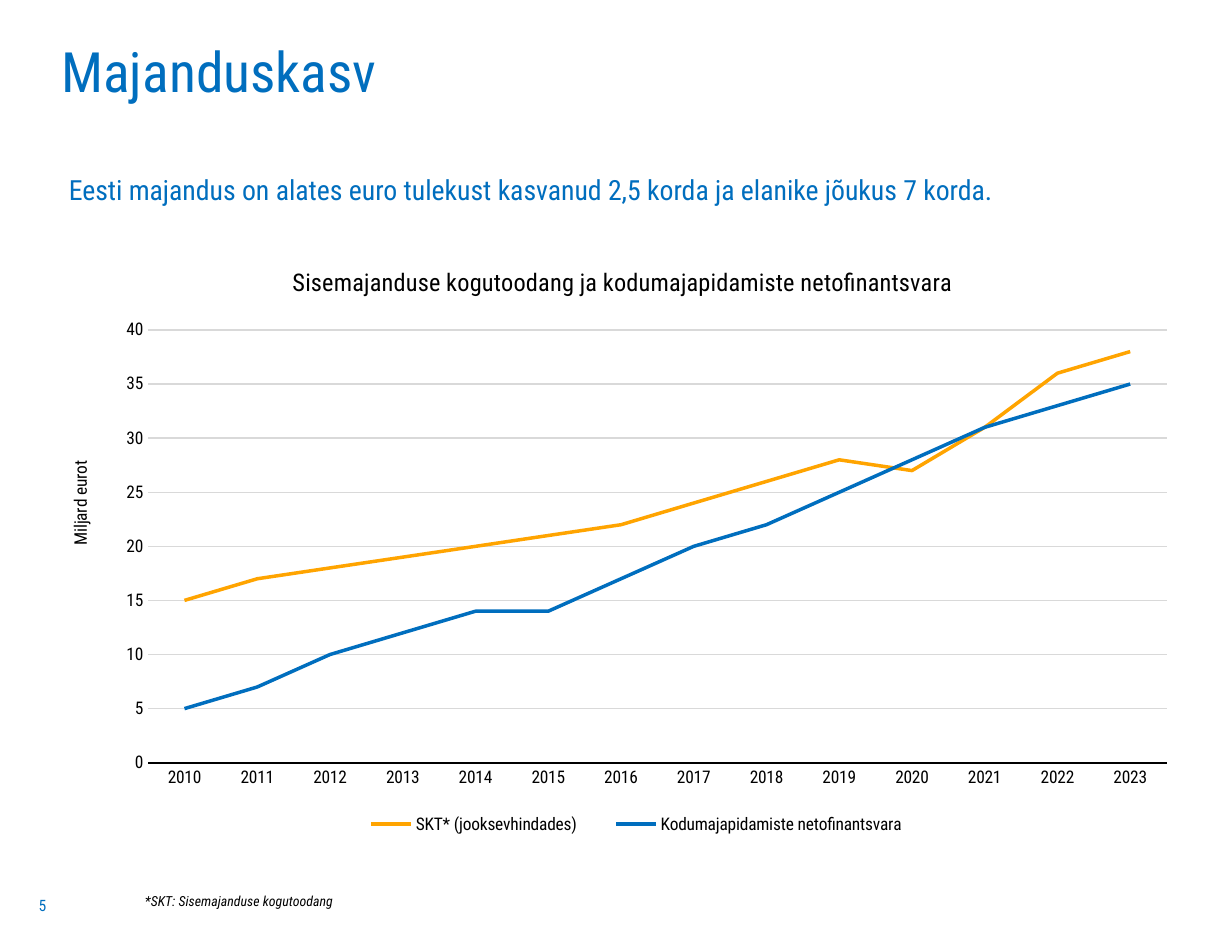
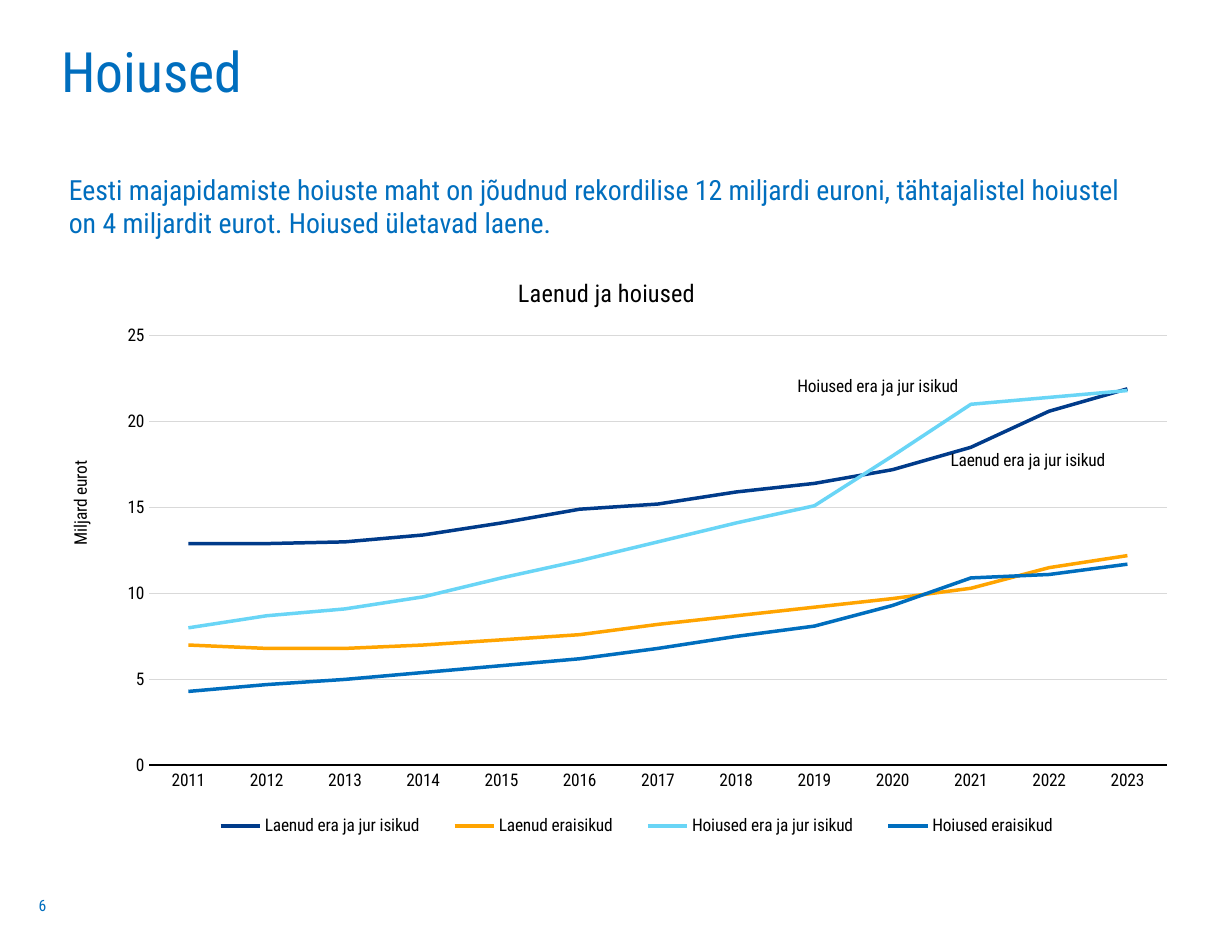
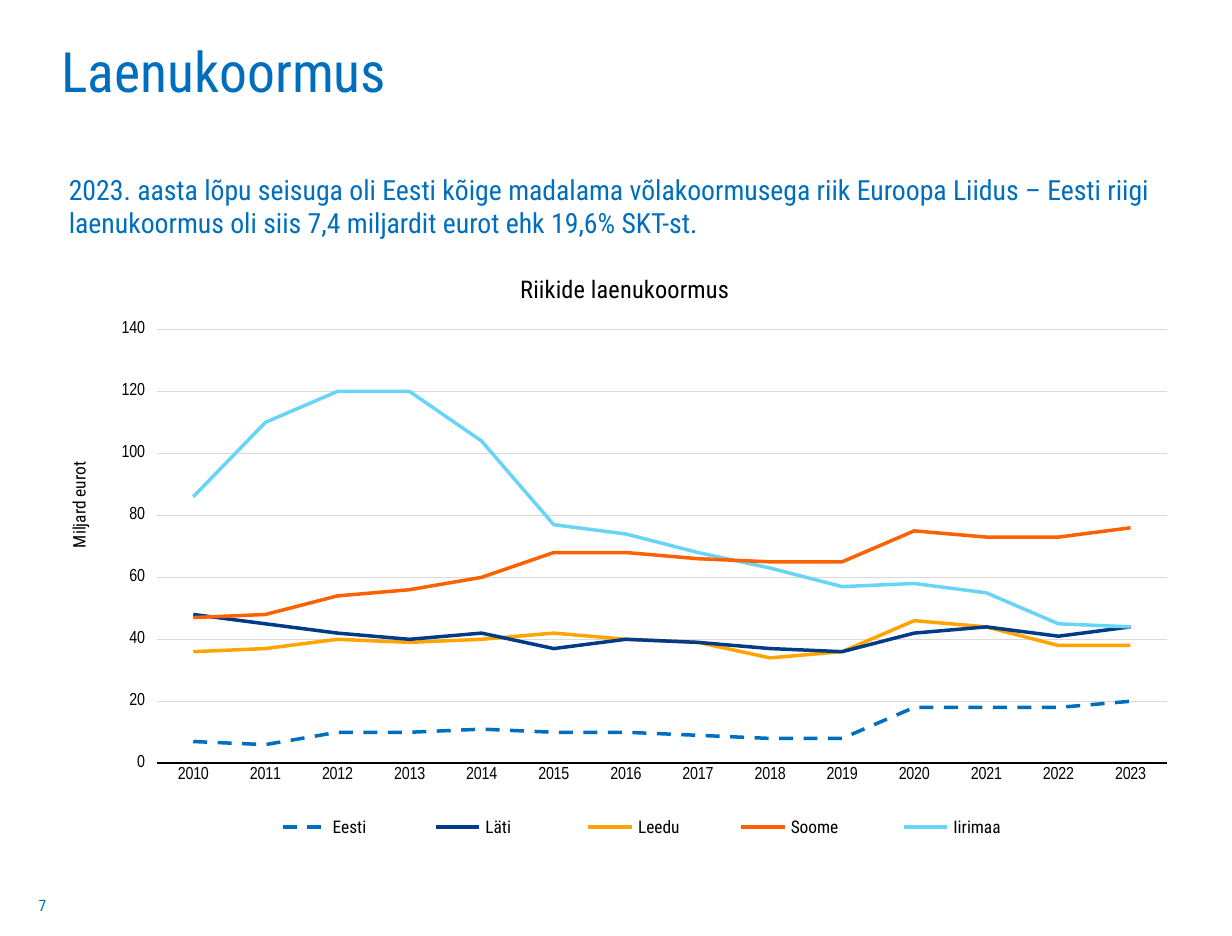
"""Build three slides on Estonian growth, deposits and debt, each with a line chart."""
import dataclasses
import typing

import lxml.etree
import pptx
import pptx.chart.chart
import pptx.chart.data
import pptx.dml.color
import pptx.enum.chart
import pptx.enum.dml
import pptx.enum.shapes
import pptx.enum.text
import pptx.oxml.ns
import pptx.slide
import pptx.text.text
import pptx.util

Inches = pptx.util.Inches
Pt = pptx.util.Pt
qn = pptx.oxml.ns.qn
Box = tuple[float, float, float, float]


@dataclasses.dataclass(frozen=True)
class Theme:
    font: str = "Roboto Condensed"
    slim: str = "Arial Narrow"
    blue: str = "006EBE"
    navy: str = "003B8A"
    gold: str = "FFA400"
    sky: str = "69D5F6"
    red: str = "FF6000"
    black: str = "000000"
    grid: str = "D9D9D9"
    head: int = 32
    lead: int = 16
    name: int = 14
    label: int = 10
    page: int = 9
    note: int = 8
    thick: float = 2
    unit: str = "Miljard eurot"


T = Theme()


@dataclasses.dataclass(frozen=True)
class Tag:
    point: int
    side: pptx.enum.chart.XL_LABEL_POSITION
    shift: tuple[float, float]


@dataclasses.dataclass(frozen=True)
class Line:
    name: str
    color: str
    vals: tuple[float, ...]
    dash: bool = False
    tag: typing.Optional[Tag] = None


@dataclasses.dataclass(frozen=True)
class Graph:
    title: str
    spot: tuple[float, float]
    box: Box
    plot: Box
    start: int
    top: int
    step: int
    lines: tuple[Line, ...]
    font: str = T.font
    code: str = "General"
    tick: pptx.enum.chart.XL_TICK_MARK = pptx.enum.chart.XL_TICK_MARK.NONE
    unit: typing.Optional[tuple[float, float]] = None
    key: float = 0


@dataclasses.dataclass(frozen=True)
class Page:
    number: int
    title: str
    lead: str
    graph: Graph


@dataclasses.dataclass(frozen=True)
class Key:
    name: str
    color: str
    left: float
    wide: float
    dash: bool = False


RIGHT = pptx.enum.chart.XL_LABEL_POSITION.RIGHT
LEFT = pptx.enum.chart.XL_LABEL_POSITION.LEFT

PAGES = (
    Page(5, "Majanduskasv",
         "Eesti majandus on alates euro tulekust kasvanud 2,5 korda ja elanike jõukus 7 korda.",
         Graph("Sisemajanduse kogutoodang ja kodumajapidamiste netofinantsvara",
               (0.221, 0.015), (0.31, 2.01, 9.02, 4.72), (0.097, 0.133, 0.903, 0.733),
               2010, 40, 5, (
                   Line("SKT* (jooksevhindades)", T.gold,
                        (15, 17, 18, 19, 20, 21, 22, 24, 26, 28, 27, 31, 36, 38)),
                   Line("Kodumajapidamiste netofinantsvara", T.blue,
                        (5, 7, 10, 12, 14, 14, 17, 20, 22, 25, 28, 31, 33, 35)),
               ), unit=(0.024, 0.349), key=0.53)),
    Page(6, "Hoiused",
         "Eesti majapidamiste hoiuste maht on jõudnud rekordilise 12 miljardi euroni, "
         "tähtajalistel hoiustel on 4 miljardit eurot. Hoiused ületavad laene.",
         Graph("Laenud ja hoiused",
               (0.421, 0.001), (0.31, 2.17, 9.02, 4.57), (0.098, 0.112, 0.902, 0.752),
               2011, 25, 5, (
                   Line("Laenud era ja jur isikud", T.navy,
                        (12.9, 12.9, 13, 13.4, 14.1, 14.9, 15.2, 15.9, 16.4, 17.2,
                         18.5, 20.6, 21.9), tag=Tag(9, RIGHT, (0.047, -0.015))),
                   Line("Laenud eraisikud", T.gold,
                        (7, 6.8, 6.8, 7, 7.3, 7.6, 8.2, 8.7, 9.2, 9.7, 10.3, 11.5, 12.2)),
                   Line("Hoiused era ja jur isikud", T.sky,
                        (8, 8.7, 9.1, 9.8, 10.9, 11.9, 13, 14.1, 15.1, 18, 21, 21.4, 21.8),
                        tag=Tag(10, LEFT, (-0.007, -0.031))),
                   Line("Hoiused eraisikud", T.blue,
                        (4.3, 4.7, 5, 5.4, 5.8, 6.2, 6.8, 7.5, 8.1, 9.3, 10.9, 11.1, 11.7)),
               ), unit=(0.024, 0.325), key=0.79)),
    Page(7, "Laenukoormus",
         "2023. aasta lõpu seisuga oli Eesti kõige madalama võlakoormusega riik Euroopa "
         "Liidus – Eesti riigi laenukoormus oli siis 7,4 miljardit eurot ehk 19,6% SKT-st.",
         Graph("Riikide laenukoormus",
               (0.423, 0.027), (0.31, 2.01, 9.02, 4.73), (0.105, 0.132, 0.895, 0.733),
               2010, 140, 20, (
                   Line("Eesti", T.blue,
                        (7, 6, 10, 10, 11, 10, 10, 9, 8, 8, 18, 18, 18, 20), dash=True),
                   Line("Leedu", T.gold,
                        (36, 37, 40, 39, 40, 42, 40, 39, 34, 36, 46, 44, 38, 38)),
                   Line("Läti", T.navy,
                        (48, 45, 42, 40, 42, 37, 40, 39, 37, 36, 42, 44, 41, 44)),
                   Line("Iirimaa", T.sky,
                        (86, 110, 120, 120, 104, 77, 74, 68, 63, 57, 58, 55, 45, 44)),
                   Line("Soome", T.red,
                        (47, 48, 54, 56, 60, 68, 68, 66, 65, 65, 75, 73, 73, 76)),
               ), font=T.slim, code="#,##0", tick=pptx.enum.chart.XL_TICK_MARK.OUTSIDE)),
)

KEYS = (
    Key("Eesti", T.blue, 2.56, 0.55, True),
    Key("Läti", T.navy, 3.78, 0.55),
    Key("Leedu", T.gold, 5, 0.55),
    Key("Soome", T.red, 6.22, 0.63),
    Key("Iirimaa", T.sky, 7.52, 0.63),
)


def rgb(color: str) -> pptx.dml.color.RGBColor:
    return pptx.dml.color.RGBColor.from_string(color)


def style(font: typing.Any, size: float, color: str = T.black, face: str = T.font) -> None:
    font.name = face
    font.size = Pt(size)
    font.bold = False
    font.color.rgb = rgb(color)


def stroke(line: typing.Any, color: str, width: float, dash: bool = False) -> None:
    line.color.rgb = rgb(color)
    line.width = Pt(width)
    if dash:
        line.dash_style = pptx.enum.dml.MSO_LINE.DASH


def write(frame: pptx.text.text.TextFrame, text: str, size: float,
          color: str = T.black) -> pptx.text.text._Paragraph:
    frame.text = text
    para = frame.paragraphs[0]
    style(para.runs[0].font, size, color)
    return para


def move(shape: typing.Any, box: Box) -> None:
    shape.left, shape.top, shape.width, shape.height = map(Inches, box)


def pad(frame: pptx.text.text.TextFrame, top: float = 0) -> None:
    frame.margin_left = frame.margin_right = frame.margin_bottom = 0
    frame.margin_top = Inches(top)
    frame.word_wrap = True
    frame.auto_size = pptx.enum.text.MSO_AUTO_SIZE.NONE
    frame.vertical_anchor = pptx.enum.text.MSO_ANCHOR.TOP


def fill(holder: typing.Any, box: Box, text: str, size: float,
         top: float = 0) -> pptx.text.text._Paragraph:
    move(holder, box)
    pad(holder.text_frame, top)
    para = write(holder.text_frame, text, size, T.blue)
    para.alignment = pptx.enum.text.PP_ALIGN.LEFT
    para.space_before = Pt(0)
    return para


def label(slide: pptx.slide.Slide, box: Box, text: str, size: float) -> typing.Any:
    shape = slide.shapes.add_textbox(*map(Inches, box))
    frame = shape.text_frame
    frame.word_wrap = True
    frame.auto_size = pptx.enum.text.MSO_AUTO_SIZE.SHAPE_TO_FIT_TEXT
    write(frame, text, size).line_spacing = 1.1
    return shape


def place(node: typing.Any, index: int, spot: tuple[float, ...],
          edge: bool = True, inner: bool = False) -> None:
    for old in node.findall(qn("c:layout")):
        node.remove(old)
    layout = lxml.etree.Element(qn("c:layout"))
    manual = lxml.etree.SubElement(layout, qn("c:manualLayout"))
    parts = [("layoutTarget", "inner")] if inner else []
    if edge:
        parts += [("xMode", "edge"), ("yMode", "edge")]
    parts += [(side, f"{size:g}") for side, size in zip("xywh", spot)]
    for part, val in parts:
        lxml.etree.SubElement(manual, qn(f"c:{part}")).set("val", val)
    node.insert(index, layout)


def draw_tag(series: typing.Any, tag: Tag) -> None:
    mark = series.points[tag.point].data_label
    style(mark.font, T.label)
    mark.position = tag.side
    series.data_labels.show_value = False
    group = series.data_labels._element
    for lead in group.findall(qn("c:showLeaderLines")):
        lead.set("val", "0")
    node = group.find(qn("c:dLbl"))
    node.find(qn("c:showVal")).set("val", "0")
    node.find(qn("c:showSerName")).set("val", "1")
    place(node, 1, tag.shift, edge=False)


def draw_axes(chart: pptx.chart.chart.Chart, graph: Graph) -> None:
    years, scale = chart.category_axis, chart.value_axis
    for axis in (years, scale):
        axis.major_tick_mark = axis.minor_tick_mark = pptx.enum.chart.XL_TICK_MARK.NONE
        style(axis.tick_labels.font, T.label, face=graph.font)
    scale.major_tick_mark = graph.tick
    stroke(years.format.line, T.black, 1.25)
    scale.format.line.fill.background()
    scale.minimum_scale, scale.maximum_scale = 0, graph.top
    scale.major_unit = graph.step
    scale.has_major_gridlines = True
    stroke(scale.major_gridlines.format.line, T.grid, 0.75)
    scale.tick_labels.number_format = graph.code
    scale.tick_labels.number_format_is_linked = False
    if graph.unit:
        write(scale.axis_title.text_frame, T.unit, T.label)
        node = chart.element.xpath(".//c:valAx/c:title")[0]
        place(node, 1, graph.unit)
        body = node.xpath(".//a:bodyPr")[0]
        body.set("rot", "-5400000")
        body.set("vert", "horz")


def draw_graph(slide: pptx.slide.Slide, graph: Graph) -> None:
    data = pptx.chart.data.CategoryChartData(number_format=graph.code)
    data.categories = [str(year) for year in range(graph.start, 2024)]
    for line in graph.lines:
        data.add_series(line.name, line.vals)
    chart = slide.shapes.add_chart(
        pptx.enum.chart.XL_CHART_TYPE.LINE, *map(Inches, graph.box), data).chart
    style(chart.font, T.label)
    chart.has_title = True
    write(chart.chart_title.text_frame, graph.title, T.name)
    place(chart.element.xpath("c:chart/c:title")[0], 1, graph.spot)
    place(chart.element.xpath("c:chart/c:plotArea")[0], 0, graph.plot, inner=True)
    draw_axes(chart, graph)
    chart.plots[0].vary_by_categories = False
    for line, series in zip(graph.lines, chart.plots[0].series):
        series.smooth = False
        stroke(series.format.line, line.color, T.thick, line.dash)
        if line.tag:
            draw_tag(series, line.tag)
    chart.has_legend = graph.key > 0
    if chart.has_legend:
        chart.legend.position = pptx.enum.chart.XL_LEGEND_POSITION.BOTTOM
        chart.legend.include_in_layout = False
        style(chart.legend.font, T.label)
        place(chart.element.xpath("c:chart/c:legend")[0], 1,
              (0.53 - graph.key / 2, 0.945, graph.key, 0.05))


def draw_key(slide: pptx.slide.Slide, key: Key) -> None:
    label(slide, (key.left, 6.46, key.wide, 0.27), key.name, T.label)
    start, level = key.left - 0.3, Inches(6.61)
    line = slide.shapes.add_connector(
        pptx.enum.shapes.MSO_CONNECTOR.STRAIGHT,
        Inches(start), level, Inches(start + 0.35), level)
    stroke(line.line, key.color, T.thick, key.dash)
    lxml.etree.SubElement(line.element.spPr, qn("a:effectLst"))


def draw_page(deck: typing.Any, page: Page) -> pptx.slide.Slide:
    slide = deck.slides.add_slide(deck.slide_layouts[1])
    title = fill(slide.shapes.title, (0.49, 0.3, 8.66, 0.67), page.title, T.head, 0.06)
    title.line_spacing = 0.88
    lead = fill(slide.placeholders[1], (0.55, 1.38, 8.66, 5.37), page.lead, T.lead)
    props = lead._p.get_or_add_pPr()
    props.set("marL", "0")
    props.set("indent", "0")
    lxml.etree.SubElement(props, qn("a:buNone"))
    draw_graph(slide, page.graph)
    box = (0.31, 7.14, 2.57, 0.3)
    number = slide.shapes.add_textbox(*map(Inches, box))
    fill(number, box, str(page.number), T.page, 0.03).line_spacing = 0.95
    return slide


def main() -> None:
    deck = pptx.Presentation()
    deck.slide_width, deck.slide_height = Pt(708.75), Pt(538.62)
    growth, _, debt = [draw_page(deck, page) for page in PAGES]
    note = label(growth, (1.06, 7.07, 1.81, 0.24), "*SKT: Sisemajanduse kogutoodang", T.note)
    note.text_frame.paragraphs[0].runs[0].font.italic = True
    unit = label(debt, (0, 3.9, 1.23, 0.27), T.unit, T.label)
    unit.rotation = 270
    unit.text_frame.paragraphs[0].alignment = pptx.enum.text.PP_ALIGN.CENTER
    for key in KEYS:
        draw_key(debt, key)
    deck.save("out.pptx")


if __name__ == "__main__":
    main()
